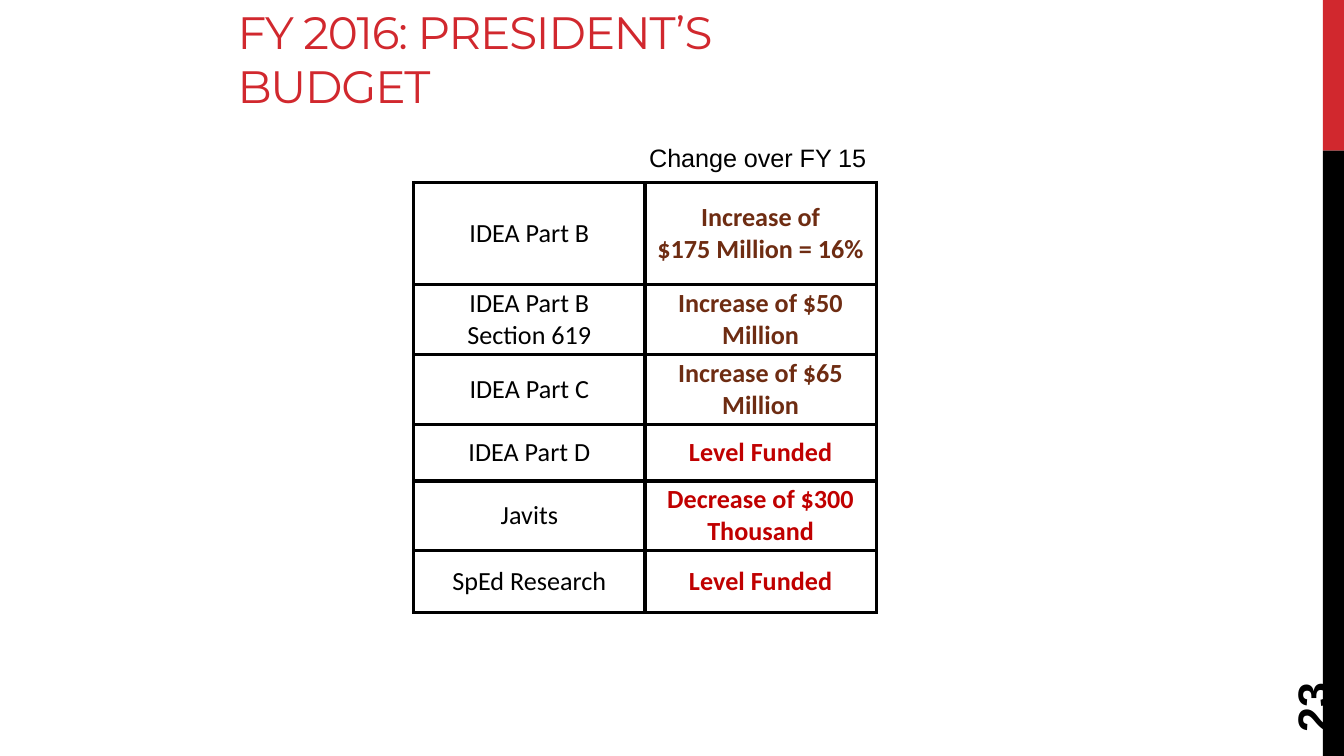
from typing import NamedTuple

from lxml.etree import SubElement as Sub
from pptx import Presentation
from pptx.dml.color import RGBColor as Rgb
from pptx.enum.shapes import MSO_SHAPE as Kind
from pptx.enum.text import MSO_ANCHOR as Anchor, PP_ALIGN as Align
from pptx.oxml.ns import qn
from pptx.util import Cm, Pt

HUES = {"red": "D1282E", "black": "000000", "brown": "6E2C12", "dark": "C00000"}


class Box(NamedTuple):
    left: float
    top: float
    width: float
    height: float

    def place(self) -> list:
        return [Cm(size) for size in self]


class Face(NamedTuple):
    name: str
    size: float
    hue: str = "black"
    bold: bool = False


class Row(NamedTuple):
    height: float
    item: str
    change: str
    hue: str


ROWS = [
    Row(1.93, "IDEA Part B", "Increase of\n$175 Million = 16%", "brown"),
    Row(1.32, "IDEA Part B\nSection 619", "Increase of $50 Million", "brown"),
    Row(1.32, "IDEA Part C", "Increase of $65 Million", "brown"),
    Row(1.07, "IDEA Part D", "Level Funded", "dark"),
    Row(1.32, "Javits", "Decrease of $300 Thousand", "dark"),
    Row(1.17, "SpEd Research", "Level Funded", "dark"),
]


def write(frame, text: str, face: Face, align=Align.LEFT) -> None:
    frame.text = text
    for para in frame.paragraphs:
        para.alignment = align
        font = para.font
        font.name, font.size, font.bold = face.name, Pt(face.size), face.bold
        font.color.rgb = Rgb.from_string(HUES[face.hue])


def inset(part, side: float, end: float) -> None:
    part.margin_left = part.margin_right = Cm(side)
    part.margin_top = part.margin_bottom = Cm(end)


def add_bar(slide, box: Box, hue: str) -> None:
    bar = slide.shapes.add_shape(Kind.RECTANGLE, *box.place())
    bar.shadow.inherit = False
    bar.fill.solid()
    bar.fill.fore_color.rgb = Rgb.from_string(HUES[hue])
    bar.line.fill.background()


def add_text(slide, box: Box, text: str, face: Face, anchor=Anchor.TOP,
             side: float = 0.25, end: float = 0.13):
    shape = slide.shapes.add_textbox(*box.place())
    frame = shape.text_frame
    frame.word_wrap = True
    frame.vertical_anchor = anchor
    inset(frame, side, end)
    write(frame, text, face)
    return shape


def add_edges(cell, hue: str, width: float) -> None:
    props = cell._tc.get_or_add_tcPr()
    for tag in ("a:lnL", "a:lnR", "a:lnT", "a:lnB"):
        line = Sub(props, qn(tag), w=str(Pt(width)))
        fill = Sub(line, qn("a:solidFill"))
        Sub(fill, qn("a:srgbClr"), val=HUES[hue])


def fill_cell(cell, text: str, face: Face) -> None:
    write(cell.text_frame, text, face, Align.CENTER)
    cell.vertical_anchor = Anchor.MIDDLE
    inset(cell, 0.05, 0.05)
    add_edges(cell, "black", 2)
    cell.fill.background()


def add_grid(slide, left: float, top: float, width: float, rows: list[Row]) -> None:
    high = sum(row.height for row in rows)
    box = Box(left, top, 2 * width, high)
    grid = slide.shapes.add_table(len(rows), 2, *box.place()).table
    grid.first_row = grid.horz_banding = False
    for col in grid.columns:
        col.width = Cm(width)
    for at, row in enumerate(rows):
        grid.rows[at].height = Cm(row.height)
        fill_cell(grid.cell(at, 0), row.item, Face("Calibri", 14))
        fill_cell(grid.cell(at, 1), row.change, Face("Calibri", 14, row.hue, True))


def main() -> None:
    deck = Presentation()
    deck.slide_width, deck.slide_height = Cm(25.4), Cm(14.29)
    slide = deck.slides.add_slide(deck.slide_layouts[6])

    # Side bars
    add_bar(slide, Box(25, 0, 0.4, 2.85), "red")
    add_bar(slide, Box(25, 2.85, 0.4, 11.44), "black")

    # Title, with tight letters
    title = add_text(slide, Box(4.24, 0.58, 12.07, 1.68), "FY 2016: PRESIDENT’S BUDGET",
                     Face("Montserrat", 24.3, "red"), Anchor.BOTTOM)
    run = title.text_frame.paragraphs[0].runs[0]
    run._r.get_or_add_rPr().set("spc", "-60")

    # Page number
    page = add_text(slide, Box(23.32, 12.14, 2.74, 1.02), "23",
                    Face("Arial", 24, bold=True), side=0.18, end=0.1)
    page.rotation = 270

    # Budget table and its heading
    add_grid(slide, 7.82, 3.45, 4.37, ROWS)
    add_text(slide, Box(12.27, 2.69, 5.08, 0.58), "Change over FY 15",
             Face("Arial", 13.5), Anchor.MIDDLE, side=0, end=0)

    deck.save("out.pptx")


if __name__ == "__main__":
    main()
